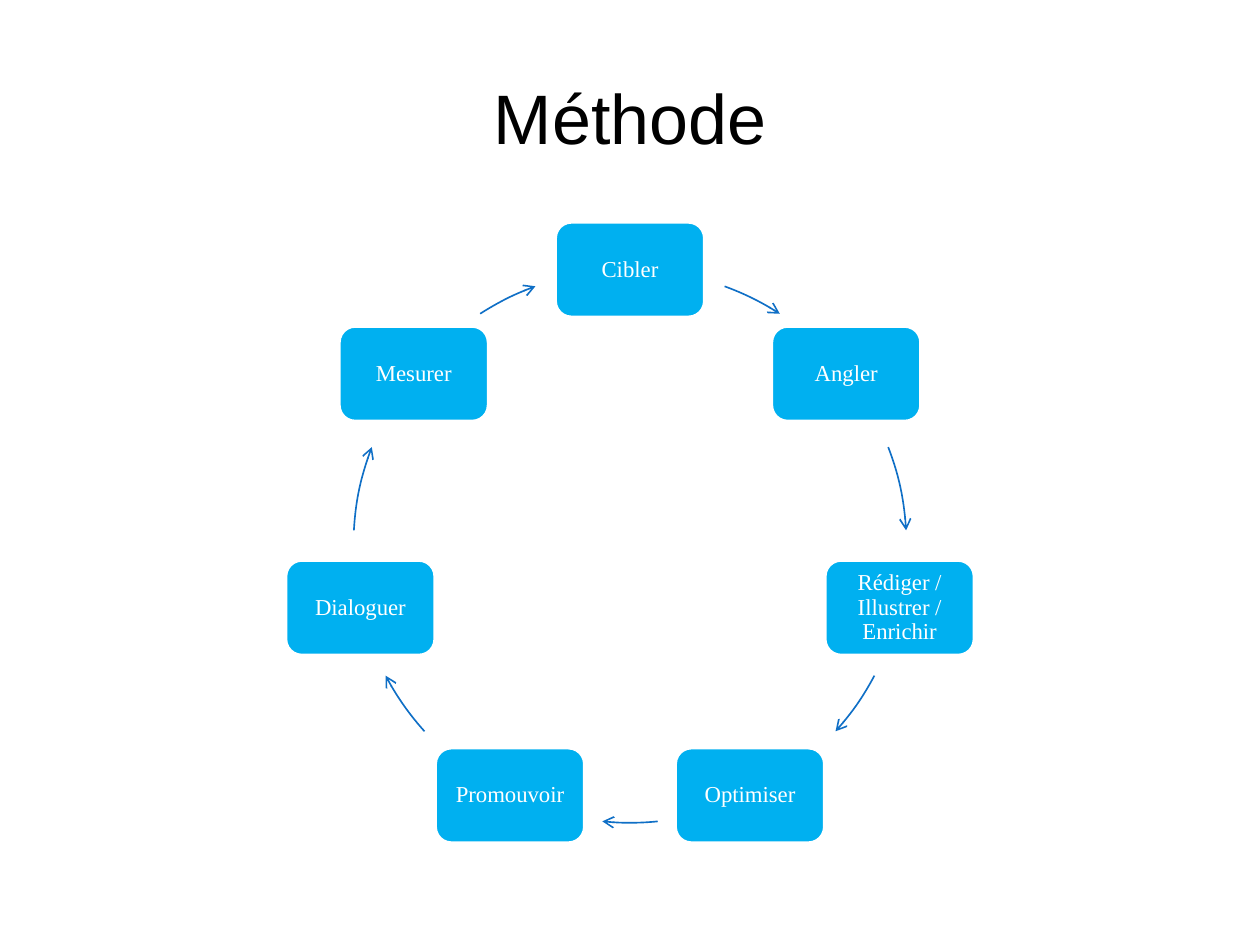
from math import cos, radians, sin
from typing import NamedTuple

from lxml.etree import SubElement
from pptx import Presentation
from pptx.dml.color import RGBColor
from pptx.enum.shapes import MSO_SHAPE
from pptx.enum.text import MSO_ANCHOR, PP_ALIGN
from pptx.oxml.ns import qn
from pptx.slide import Slide
from pptx.util import Inches, Pt

SLIDE_W, SLIDE_H = Inches(10), Inches(7.5)

# Cycle geometry as shares of the slide's size
CENTRE_X, CENTRE_Y = SLIDE_W * 0.5, SLIDE_H * 0.578
RADIUS = SLIDE_W * 0.2195
STEP_W, STEP_H = SLIDE_W * 0.118, SLIDE_H * 0.1

STEP_FILL, ARROW_BLUE, WHITE, BLACK = "00B0F0", "0F6FC6", "FFFFFF", "000000"


class Span(NamedTuple):
    """Arc in degrees, clockwise from the top of the cycle."""
    start: float
    end: float

    def mirrored(self) -> "Span":
        return Span(360 - self.end, 360 - self.start)


STEPS = ["Cibler", "Angler", "Rédiger / Illustrer / Enrichir", "Optimiser",
         "Promouvoir", "Dialoguer", "Mesurer"]
RIGHT_SPANS = [Span(20, 32.8), Span(69, 86.7), Span(117.9, 132)]
BOTTOM_SPAN = Span(174.25, 185.75)
SPANS = [*RIGHT_SPANS, BOTTOM_SPAN,
         *(span.mirrored() for span in reversed(RIGHT_SPANS))]


def colour(hex_code: str) -> RGBColor:
    return RGBColor.from_string(hex_code)


def add_title(slide: Slide, wording: str) -> None:
    title = slide.shapes.title
    title.left, title.top = int(SLIDE_W * 0.05), int(SLIDE_H * 0.04)
    title.width, title.height = int(SLIDE_W * 0.9), Inches(1.25)
    frame = title.text_frame
    frame.text = wording
    frame.vertical_anchor = MSO_ANCHOR.MIDDLE
    heading = frame.paragraphs[0]
    heading.alignment = PP_ALIGN.CENTER
    font = heading.runs[0].font
    font.name, font.size = "Arial", Pt(40)
    font.color.rgb = colour(BLACK)


def add_step(slide: Slide, wording: str, angle: float) -> None:
    x = CENTRE_X + RADIUS * sin(radians(angle))
    y = CENTRE_Y - RADIUS * cos(radians(angle))
    step = slide.shapes.add_shape(
        MSO_SHAPE.ROUNDED_RECTANGLE, int(x - STEP_W / 2), int(y - STEP_H / 2),
        int(STEP_W), int(STEP_H))
    step.shadow.inherit = False
    step.fill.solid()
    step.fill.fore_color.rgb = colour(STEP_FILL)
    step.line.color.rgb = colour(WHITE)
    step.line.width = Pt(1.5)

    frame = step.text_frame
    frame.text = wording
    frame.word_wrap = True
    frame.vertical_anchor = MSO_ANCHOR.MIDDLE
    frame.margin_left = frame.margin_right = Inches(0.05)
    frame.margin_top = frame.margin_bottom = Inches(0.05)
    label = frame.paragraphs[0]
    label.alignment = PP_ALIGN.CENTER
    label.line_spacing = 0.9
    label.space_after = Pt(4.55)
    font = label.runs[0].font
    font.name, font.size = "Times New Roman", Pt(13)
    font.color.rgb = colour(WHITE)


def add_arc_arrow(slide: Slide, span: Span) -> None:
    arc = slide.shapes.add_shape(
        MSO_SHAPE.ARC, int(CENTRE_X - RADIUS), int(CENTRE_Y - RADIUS),
        int(RADIUS * 2), int(RADIUS * 2))
    # Arc adjustments run clockwise from the right, 0.6 units to a degree
    for index, angle in enumerate(span):
        arc.adjustments[index] = (angle - 90) % 360 * 0.6
    arc.shadow.inherit = False
    arc.fill.background()
    arc.line.color.rgb = colour(ARROW_BLUE)
    arc.line.width = Pt(0.94)
    SubElement(arc.line._get_or_add_ln(), qn("a:tailEnd"), type="arrow")


def main() -> None:
    presentation = Presentation()
    presentation.slide_width, presentation.slide_height = SLIDE_W, SLIDE_H
    slide = presentation.slides.add_slide(presentation.slide_layouts[5])
    add_title(slide, "Méthode")

    # Steps evenly spaced on the circle, each followed by its arrow
    for index, (wording, span) in enumerate(zip(STEPS, SPANS)):
        add_step(slide, wording, index * 360 / len(STEPS))
        add_arc_arrow(slide, span)

    presentation.save("out.pptx")


if __name__ == "__main__":
    main()
